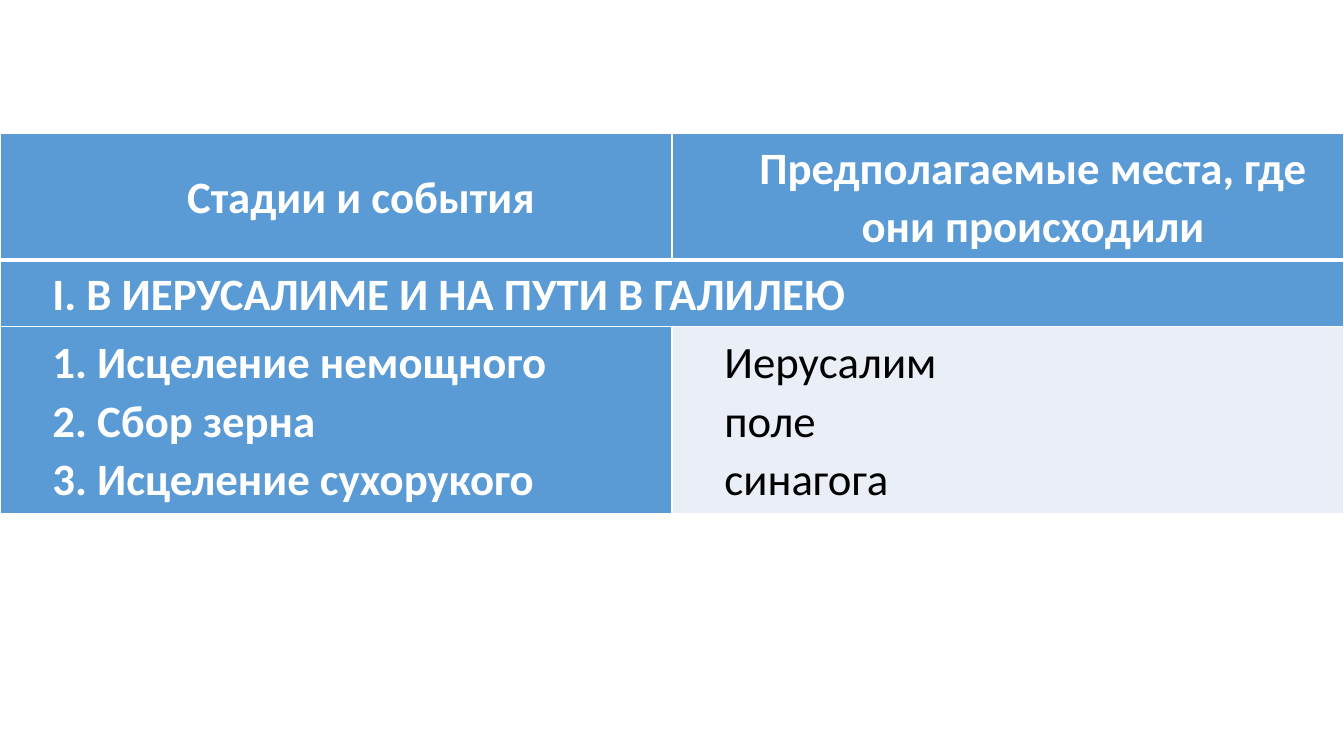
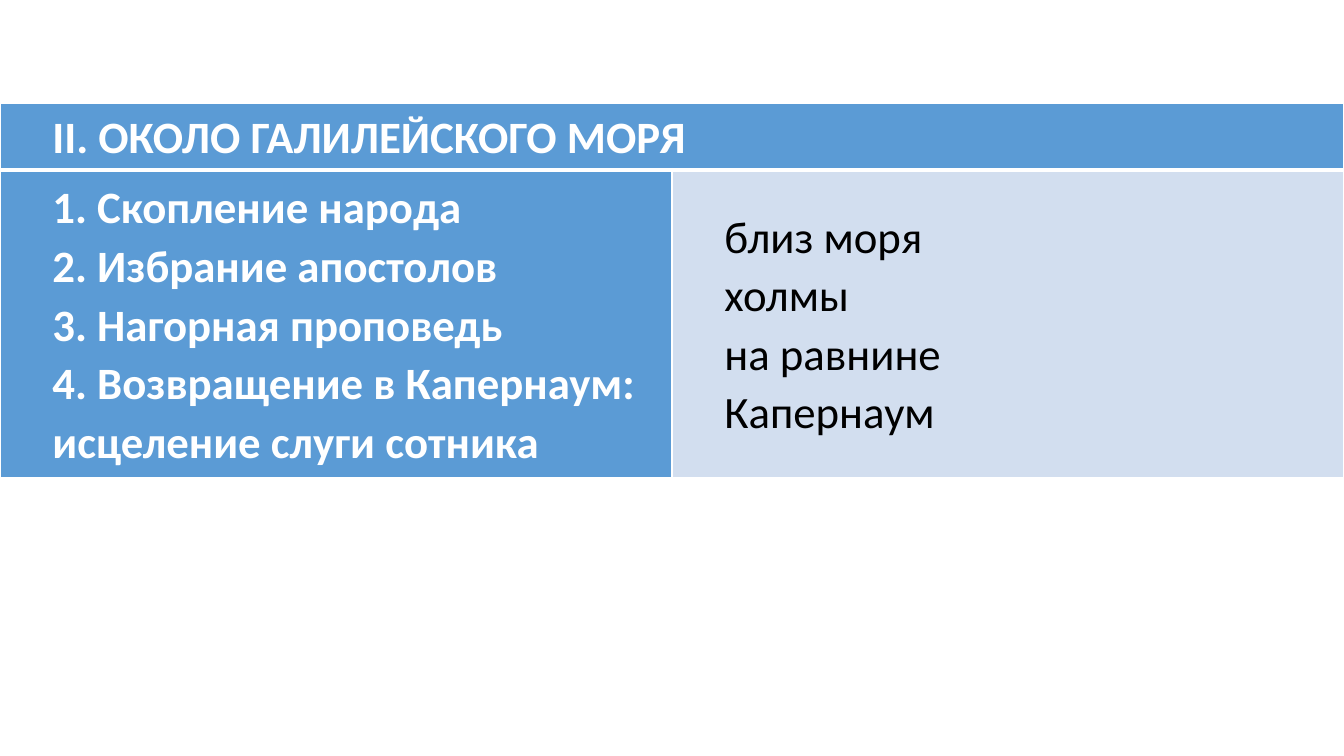
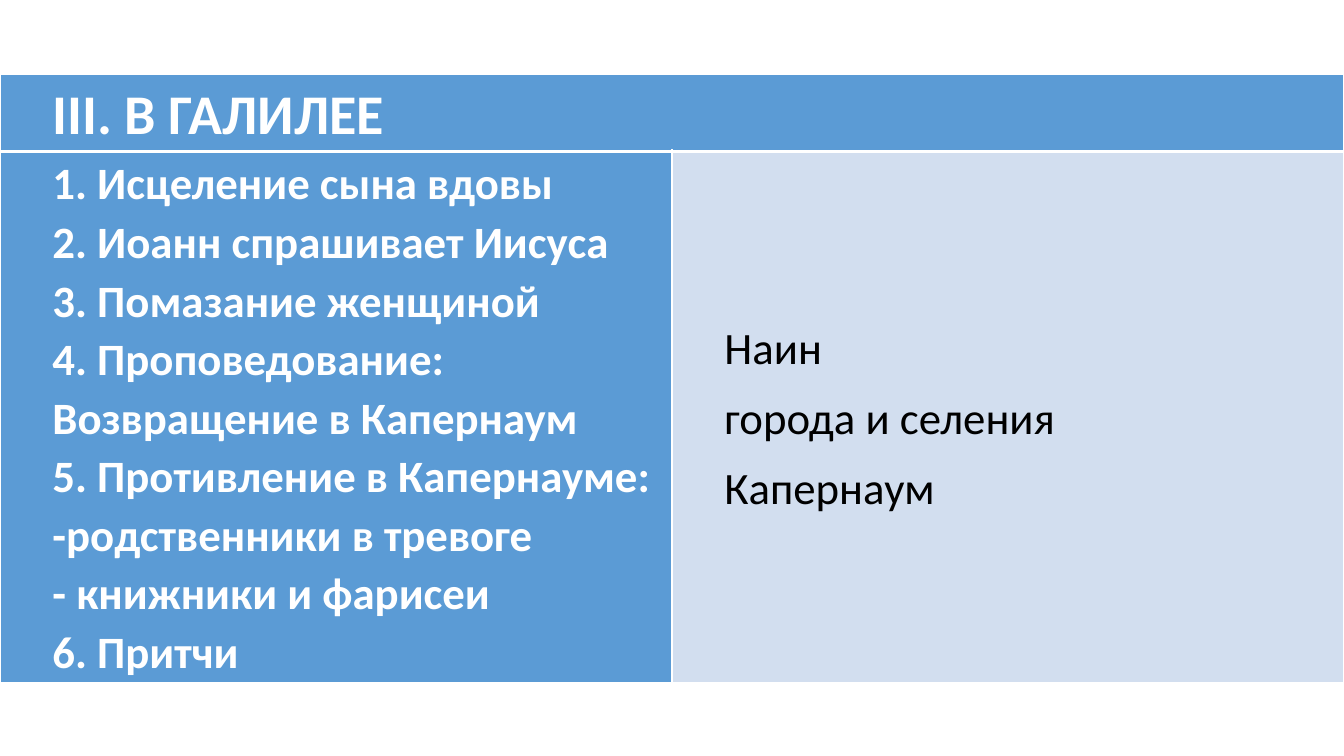
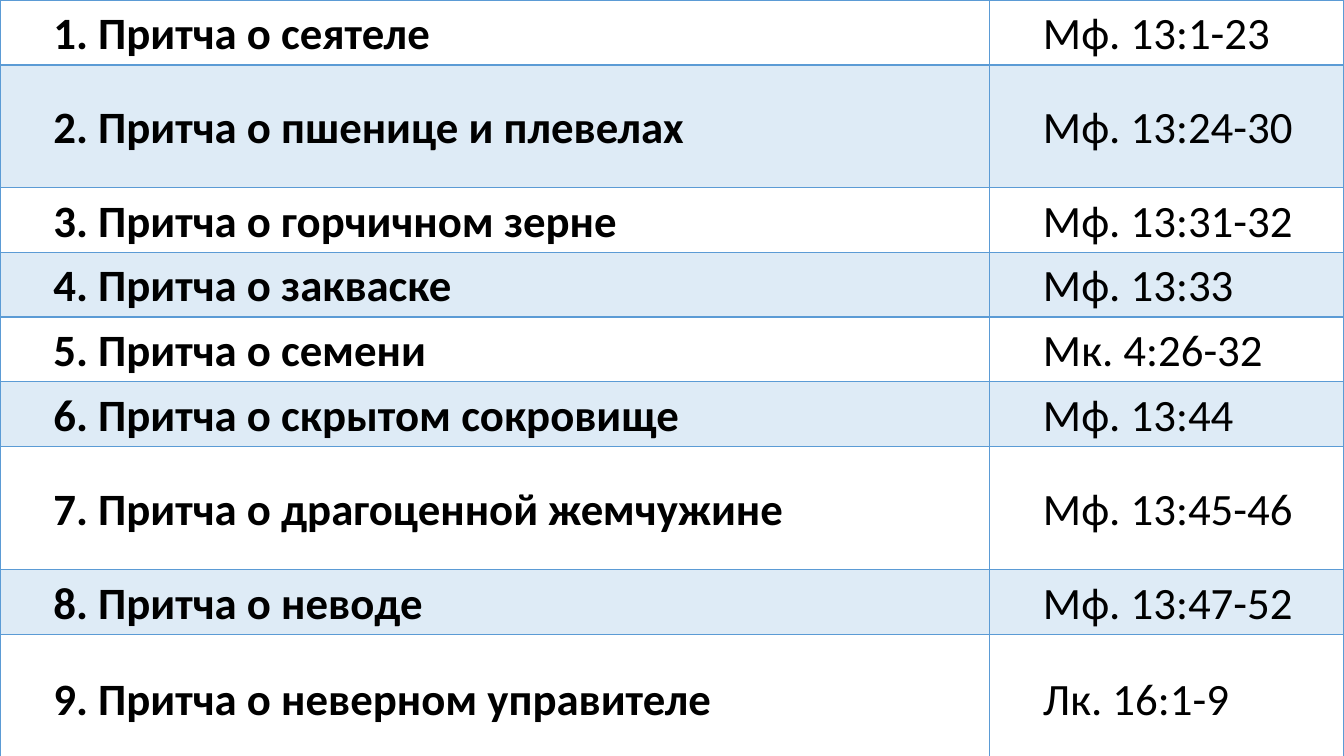
"""Build four slides of Gospel events, places and parables as tables."""
import pptx
import pptx.dml.color
import pptx.enum.text
import pptx.oxml
import pptx.oxml.ns
import pptx.util

Pt = pptx.util.Pt
ALIGN = pptx.enum.text.PP_ALIGN
RGB = pptx.dml.color.RGBColor.from_string

THEME = {
    "font": "Calibri", "text_size": 32, "title_size": 40,
    "blue": "5B9BD5", "white": "FFFFFF", "black": "000000",
    "light": "EAEFF7", "pale": "D2DEEF", "tint": 20,
    "indent": 36, "line_spacing": 1.07, "space_after": 8, "border": 1,
}
SLIDE_SIZE = (960, 540)

STAGES = [
    {"top": 95, "height": 272, "place_fill": "light", "rows": [
        ("header", 90.6, ["Стадии и события", "Предполагаемые места, где они происходили"]),
        ("section", 47.5, ["I. В ИЕРУСАЛИМЕ И НА ПУТИ В ГАЛИЛЕЮ"]),
        ("events", 134, ["1. Исцеление немощного\n2. Сбор зерна\n3. Исцеление сухорукого",
                         "Иерусалим\nполе\nсинагога"]),
    ]},
    {"top": 73.8, "height": 268, "place_fill": "pale", "rows": [
        ("title", 47.5, ["II. ОКОЛО ГАЛИЛЕЙСКОГО МОРЯ"]),
        ("events", 220, ["1. Скопление народа\n2. Избрание апостолов\n3. Нагорная проповедь\n"
                         "4. Возвращение в Капернаум: исцеление слуги сотника",
                         "близ моря\nхолмы\nна равнине\nКапернаум"]),
    ]},
    {"top": 53, "height": 423, "place_fill": "pale", "rows": [
        ("large title", 44, ["III. В ГАЛИЛЕЕ"]),
        ("events", 309, ["1. Исцеление сына вдовы\n2. Иоанн спрашивает Иисуса\n3. Помазание женщиной\n"
                         "4. Проповедование: Возвращение в Капернаум\n5. Противление в Капернауме:\n"
                         "-родственники в тревоге\n- книжники и фарисеи\n6. Притчи",
                         ["Наин", "города и селения", "Капернаум"]]),
    ]},
]

LOW, HIGH, LAST = 45.4, 87.8, 91.4
PARABLES = [
    (LOW, "1. Притча о сеятеле", "Мф. 13:1-23"),
    (HIGH, "2. Притча о пшенице и плевелах", "Мф. 13:24-30"),
    (LOW, "3. Притча о горчичном зерне", "Мф. 13:31-32"),
    (LOW, "4. Притча о закваске", "Мф. 13:33"),
    (LOW, "5. Притча о семени", "Мк. 4:26-32"),
    (LOW, "6. Притча о скрытом сокровище", "Мф. 13:44"),
    (HIGH, "7. Притча о драгоценной жемчужине", "Мф. 13:45-46"),
    (LOW, "8. Притча о неводе", "Мф. 13:47-52"),
    (LAST, "9. Притча о неверном управителе", "Лк. 16:1-9"),
]


def set_all(target, values):
    for name, value in values.items():
        setattr(target, name, value)


def add_grid(deck, top, height, widths, heights):
    page = deck.slides.add_slide(deck.slide_layouts[6])
    frame = page.shapes.add_table(len(heights), len(widths), Pt(0), Pt(top),
                                  Pt(SLIDE_SIZE[0]), Pt(height))
    table = frame.table
    set_all(table, {"first_row": False, "horz_banding": False})
    for column, width in zip(table.columns, widths):
        column.width = Pt(width)
    for row, row_height in zip(table.rows, heights):
        row.height = Pt(row_height)
    return table


def write_cell(cell, content, inset, color="black", bold=False, size="text_size",
               align=ALIGN.LEFT, after=0):
    set_all(cell, {"vertical_anchor": pptx.enum.text.MSO_ANCHOR.MIDDLE,
                   **{f"margin_{side}": Pt(inset) for side in ("left", "right", "top", "bottom")}})
    texts = content if isinstance(content, list) else [content]
    for index, text in enumerate(texts):
        para = cell.text_frame.add_paragraph() if index else cell.text_frame.paragraphs[0]
        para.text = text
        set_all(para, {"level": 1, "alignment": align, "space_after": Pt(after),
                       "space_before": Pt(0), "line_spacing": THEME["line_spacing"]})
        properties = para._p.get_or_add_pPr()
        properties.set("marL", str(Pt(THEME["indent"])))
        properties.set("indent", "0")
        for span in para.runs:
            set_all(span.font, {"name": THEME["font"], "size": Pt(THEME[size]), "bold": bold})
            span.font.color.rgb = RGB(THEME[color])


def fill_cell(cell, color=None, opacity=100):
    if color is None:
        cell.fill.background()
        return
    cell.fill.solid()
    cell.fill.fore_color.rgb = RGB(THEME[color])
    if opacity < 100:
        code = cell._tc.tcPr.find(".//" + pptx.oxml.ns.qn("a:srgbClr"))
        alpha = pptx.oxml.parse_xml(f'<a:alpha {pptx.oxml.ns.nsdecls("a")} val="{opacity * 1000}"/>')
        code.append(alpha)


def draw_borders(table, color, header_width):
    thin = THEME["border"]
    for row_index, row in enumerate(table.rows):
        widths = {"L": thin, "R": thin,
                  "T": header_width if row_index == 1 else thin,
                  "B": header_width if row_index == 0 else thin}
        for cell in row.cells:
            for position, (side, width) in enumerate(widths.items()):
                line = pptx.oxml.parse_xml(
                    f'<a:ln{side} {pptx.oxml.ns.nsdecls("a")} w="{Pt(width)}"><a:solidFill>'
                    f'<a:srgbClr val="{THEME[color]}"/></a:solidFill></a:ln{side}>')
                cell._tc.get_or_add_tcPr().insert(position, line)


def add_stage(deck, stage):
    rows = stage["rows"]
    half = SLIDE_SIZE[0] / 2
    table = add_grid(deck, stage["top"], stage["height"], [half, half], [row[1] for row in rows])
    for row_index, (kind, _, contents) in enumerate(rows):
        if len(contents) == 1:
            table.cell(row_index, 0).merge(table.cell(row_index, 1))
        for column, content in enumerate(contents):
            is_place = kind == "events" and column == 1
            cell = table.cell(row_index, column)
            fill_cell(cell, stage["place_fill"] if is_place else "blue")
            write_cell(cell, content, 1.5,
                       color="black" if is_place else "white", bold=not is_place,
                       size="title_size" if kind == "large title" else "text_size",
                       align=ALIGN.CENTER if kind == "header" else ALIGN.LEFT,
                       after=THEME["space_after"] if kind in ("section", "events") else 0)
    draw_borders(table, "white", 3)


def add_parables(deck):
    table = add_grid(deck, 0, 540.7, [706.8, 253.2], [row[0] for row in PARABLES])
    for row_index, (_, *contents) in enumerate(PARABLES):
        for column, content in enumerate(contents):
            cell = table.cell(row_index, column)
            fill_cell(cell, "blue" if row_index % 2 else None, THEME["tint"])
            write_cell(cell, content, 2.2, bold=column == 0)
    draw_borders(table, "blue", 2)


def main():
    deck = pptx.Presentation()
    set_all(deck, dict(zip(("slide_width", "slide_height"), map(Pt, SLIDE_SIZE))))
    for stage in STAGES:
        add_stage(deck, stage)
    add_parables(deck)
    deck.save("out.pptx")


if __name__ == "__main__":
    main()
